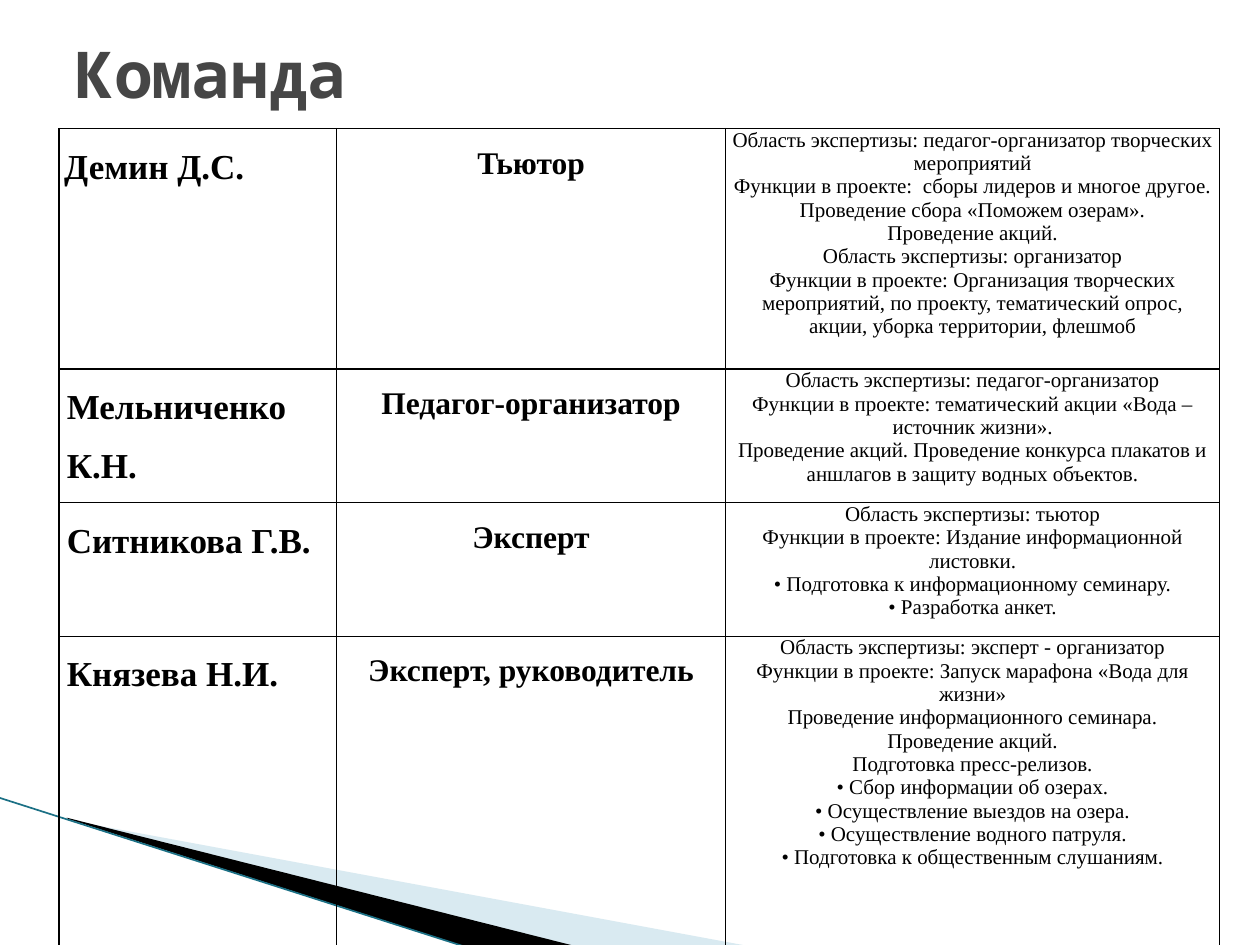
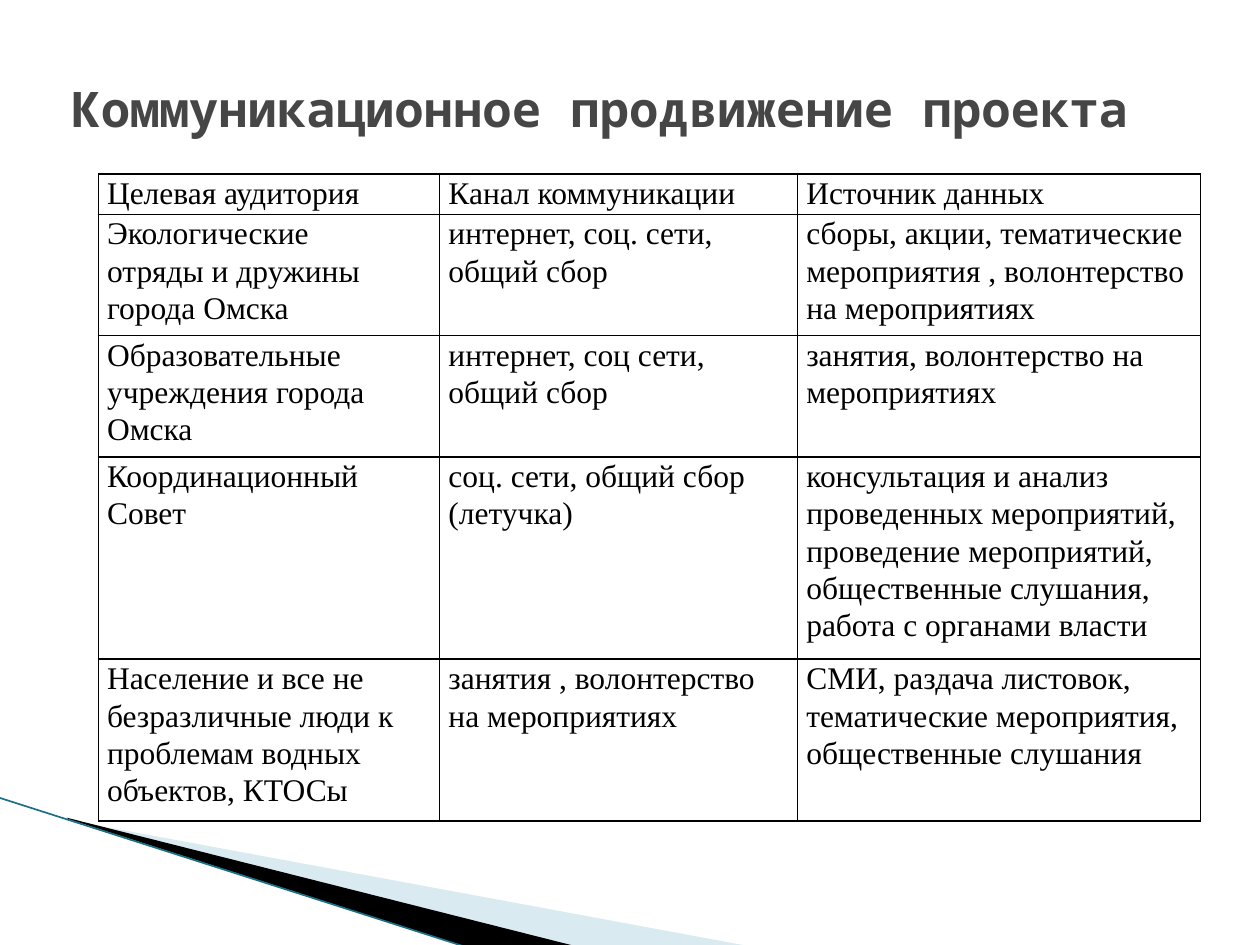
"""Builds two slides: the project team and the project's communication plan."""
from lxml.etree import SubElement as Sub
from pptx import Presentation
from pptx.dml.color import RGBColor
from pptx.enum.shapes import MSO_CONNECTOR as Connector
from pptx.enum.text import MSO_ANCHOR as Anchor, PP_ALIGN as Align
from pptx.oxml.ns import qn
from pptx.util import Inches, Pt

INK, TITLE_GREY = "000000", "464646"
PALE_BLUE, TEAL = "A0CBDC", "1B7085"
TITLE_FONT, BODY_FONT = "Noto Sans Mono", "Times New Roman"

WEDGES = [
    (PALE_BLUE, 40, [(0.55, 6.51), (5.95, 7.51), (4.56, 7.51), (0.55, 6.5)]),
    (INK, 100, [(0.53, 6.49), (4.57, 7.51), (3.72, 7.52), (0.54, 6.5)]),
]
EDGE = (-0.01, 6.33, 3.71, 7.52)

TEAM = [
    ("Демин Д.С.", "Тьютор",
     "Область экспертизы: педагог-организатор творческих мероприятий\n"
     "Функции в проекте:  сборы лидеров и многое другое.\n"
     "Проведение сбора «Поможем озерам».\n"
     "Проведение акций.\n"
     "Область экспертизы: организатор\n"
     "Функции в проекте: Организация творческих мероприятий, по проекту, "
     "тематический опрос, акции, уборка территории, флешмоб"),
    ("Мельниченко К.Н.", "Педагог-организатор",
     "Область экспертизы: педагог-организатор\n"
     "Функции в проекте: тематический акции «Вода – источник жизни».\n"
     "Проведение акций. Проведение конкурса плакатов и аншлагов "
     "в защиту водных объектов."),
    ("Ситникова Г.В.", "Эксперт",
     "Область экспертизы: тьютор\n"
     "Функции в проекте: Издание информационной листовки.\n"
     "• Подготовка к информационному семинару.\n"
     "• Разработка анкет."),
    ("Князева Н.И.", "Эксперт, руководитель",
     "Область экспертизы: эксперт - организатор\n"
     "Функции в проекте: Запуск марафона «Вода для жизни»\n"
     "Проведение информационного семинара.\n"
     "Проведение акций.\n"
     "Подготовка пресс-релизов.\n"
     "• Сбор информации об озерах.\n"
     "• Осуществление выездов на озера.\n"
     "• Осуществление водного патруля.\n"
     "• Подготовка к общественным слушаниям."),
]

CHANNELS = [
    ("Целевая аудитория", "Канал коммуникации", "Источник данных"),
    ("Экологические\nотряды и дружины города Омска",
     "интернет, соц. сети, общий сбор",
     "сборы, акции, тематические мероприятия , волонтерство на мероприятиях"),
    ("Образовательные\nучреждения города Омска",
     "интернет, соц сети, общий сбор",
     "занятия, волонтерство на мероприятиях"),
    ("Координационный Совет",
     "соц. сети, общий сбор (летучка)",
     "консультация и анализ проведенных мероприятий, проведение мероприятий, "
     "общественные слушания, работа с органами власти"),
    ("Население и все не безразличные люди к проблемам водных объектов, КТОСы",
     "занятия , волонтерство на мероприятиях",
     "СМИ, раздача листовок, тематические мероприятия, общественные слушания"),
]

NAME = dict(size=20, bold=True, align=Align.LEFT, spacing=1.5)
ROLE = dict(size=18, bold=True, align=Align.CENTER, spacing=1.5)
DUTIES = dict(size=12, bold=False, align=Align.CENTER, spacing=1.0)
PLAIN = dict(size=18, bold=False, align=Align.LEFT, spacing=1.07)

SLIDES = [
    dict(title="Команда", title_box=(0.5, 0.3, 9, 0.56), title_size=36.9,
         rows=TEAM, corner=(0.47, 1.02), widths=(2.2, 3.09, 3.92),
         heights=(1.91, 1.06, 1.06, 2.46), styles=(NAME, ROLE, DUTIES),
         inset=0.04, name_indent=0.02),
    dict(title="Коммуникационное продвижение проекта",
         title_box=(0.47, 0.23, 9, 1.25), title_size=28,
         rows=CHANNELS, corner=(0.78, 1.38), widths=(2.71, 2.84, 3.2),
         heights=(0.29, 0.95, 0.89, 1.53, 1.19), styles=(PLAIN,) * 3,
         inset=0.07, name_indent=0),
]


def rgb(code):
    """Turn a hex string into a colour."""
    return RGBColor.from_string(code)


def style_text(frame, face, size, color, bold, align=Align.LEFT, spacing=1.0):
    """Format every paragraph and run of a text frame."""
    for paragraph in frame.paragraphs:
        paragraph.alignment = align
        paragraph.line_spacing = spacing
        for run in paragraph.runs:
            font = run.font
            font.name, font.size, font.bold = face, Pt(size), bold
            font.color.rgb = rgb(color)


def add_wedges(slide):
    """Draw the corner wedges and their edge line."""
    for color, opacity, corners in WEDGES:
        points = [(Inches(x), Inches(y)) for x, y in corners]
        outline = slide.shapes.build_freeform(*points[0], scale=1.0)
        outline.add_line_segments(points[1:], close=True)
        wedge = outline.convert_to_shape()
        wedge.shadow.inherit = False
        wedge.fill.solid()
        wedge.fill.fore_color.rgb = rgb(color)
        wedge.line.fill.background()
        if opacity < 100:
            tint = wedge.fill._xPr.find(".//" + qn("a:srgbClr"))
            Sub(tint, qn("a:alpha"), val=str(opacity * 1000))
    edge = slide.shapes.add_connector(Connector.STRAIGHT, *map(Inches, EDGE))
    edge.line.color.rgb = rgb(TEAL)
    edge.line.width = Pt(0.95)
    Sub(edge._element.spPr, qn("a:effectLst"))


def add_title(slide, title, box, size):
    """Add the slide title."""
    frame = slide.shapes.add_textbox(*map(Inches, box)).text_frame
    frame.word_wrap = True
    frame.vertical_anchor = Anchor.MIDDLE
    frame.text = title
    style_text(frame, TITLE_FONT, size, TITLE_GREY, True)


def add_borders(cell):
    """Give a cell a thin black line on all four sides."""
    props = cell._tc.get_or_add_tcPr()
    for side in ("lnL", "lnR", "lnT", "lnB"):
        border = Sub(props, qn("a:" + side), w=str(Pt(1)))
        Sub(Sub(border, qn("a:solidFill")), qn("a:srgbClr"), val=INK)


def add_grid(slide, rows, corner, widths, heights, styles, inset, name_indent):
    """Add a bordered table without fills."""
    extent = (*corner, sum(widths), sum(heights))
    table = slide.shapes.add_table(
        len(rows), len(widths), *map(Inches, extent)).table
    table.first_row = table.horz_banding = False
    for column, width in zip(table.columns, widths):
        column.width = Inches(width)
    for r, (texts, height) in enumerate(zip(rows, heights)):
        table.rows[r].height = Inches(height)
        for c, (text, style) in enumerate(zip(texts, styles)):
            cell = table.cell(r, c)
            indent = name_indent if r > 0 and c == 0 else 0
            cell.margin_left = Inches(inset + indent)
            cell.margin_right = Inches(inset)
            cell.margin_top = cell.margin_bottom = 0
            add_borders(cell)
            cell.fill.background()
            cell.text_frame.text = text
            style_text(cell.text_frame, BODY_FONT, color=INK, **style)


def main():
    """Build and save the presentation."""
    deck = Presentation()
    deck.slide_width, deck.slide_height = Inches(10), Inches(7.5)
    for content in SLIDES:
        slide = deck.slides.add_slide(deck.slide_layouts[6])
        add_wedges(slide)
        add_title(slide, content["title"], content["title_box"],
                  content["title_size"])
        add_grid(slide, content["rows"], content["corner"], content["widths"],
                 content["heights"], content["styles"], content["inset"],
                 content["name_indent"])
    deck.save("out.pptx")


if __name__ == "__main__":
    main()
